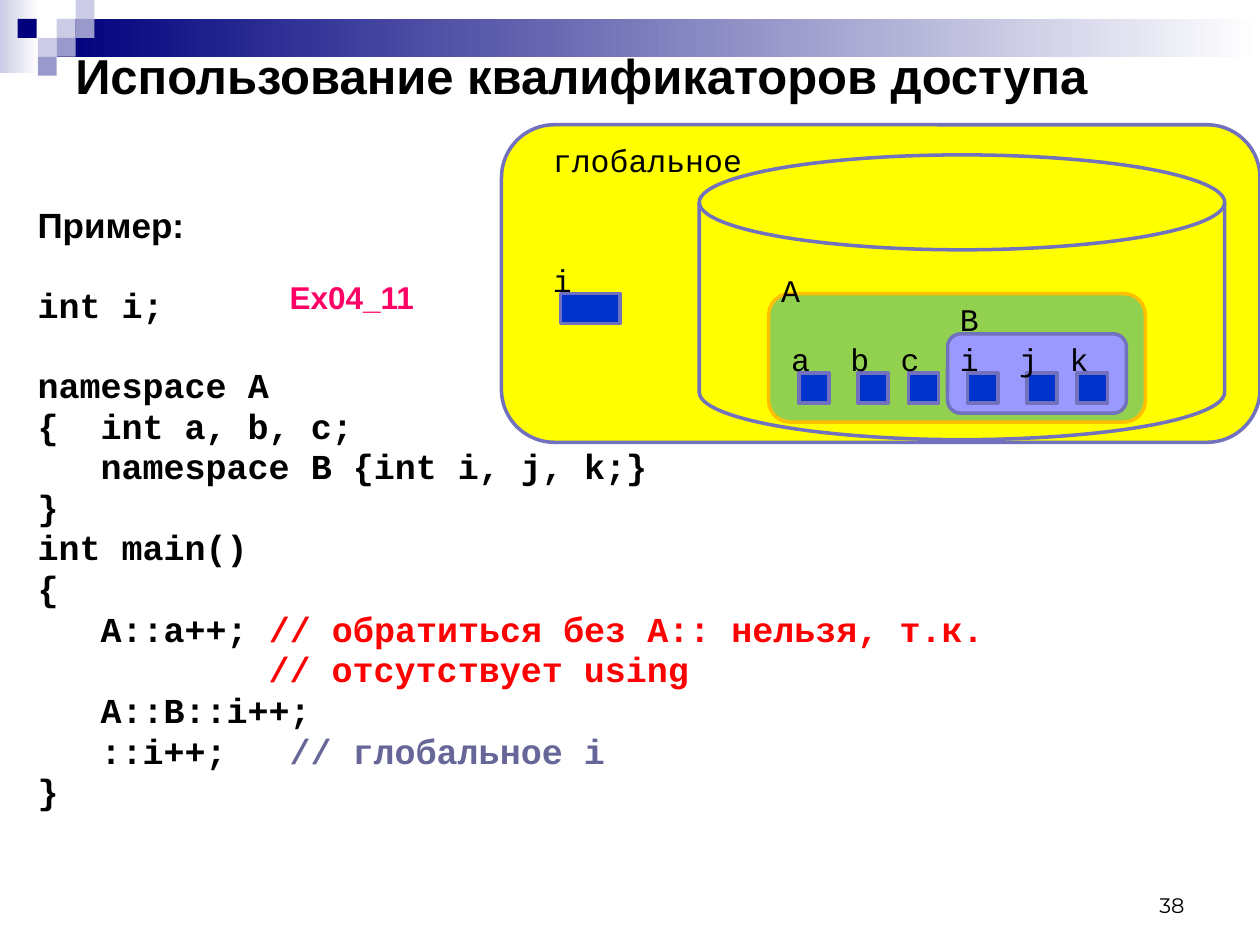
from pptx import Presentation
from pptx.dml.color import RGBColor
from pptx.enum.shapes import MSO_SHAPE
from pptx.enum.text import MSO_ANCHOR, PP_ALIGN
from pptx.oxml.xmlchemy import OxmlElement
from pptx.util import Inches, Pt

RECT = MSO_SHAPE.RECTANGLE
ROUNDED = MSO_SHAPE.FLOWCHART_ALTERNATE_PROCESS
DISK = MSO_SHAPE.FLOWCHART_MAGNETIC_DISK
TOP, MIDDLE, BOTTOM = MSO_ANCHOR.TOP, MSO_ANCHOR.MIDDLE, MSO_ANCHOR.BOTTOM
LEFT, RIGHT = PP_ALIGN.LEFT, PP_ALIGN.RIGHT

THEME = {
    "sans": "Arial", "mono": "Courier New", "number": "Montserrat",
    "title_size": 28, "code_size": 20, "label_size": 18, "number_size": 12,
    "text": "000000", "warning": "FF0000", "remark": "666699", "example": "FF0066",
    "navy": "00007D", "lilac": "CCCCE6", "violet": "9999CC", "white": "FFFFFF",
    "outline": "7171BD", "orange": "FFC000", "global": "FFFF00",
    "outer": "92D050", "inner": "9999FF", "cell": "0033CC",
}

TITLE = "Использование квалификаторов доступа"
EXAMPLE = "Ex04_11"
PAGE = "38"

# Blank lines above, indent in characters, then (text, colour) pieces
CODE = [
    (0, 0, [("Пример:", "text")]),
    (1, 0, [("int i;", "text")]),
    (1, 0, [("namespace A", "text")]),
    (0, 0, [("{\tint a, b, c;", "text")]),
    (0, 3, [("namespace B {int i, j, k;}", "text")]),
    (0, 0, [("}", "text")]),
    (0, 0, [("int main()", "text")]),
    (0, 0, [("{", "text")]),
    (0, 3, [("A::a++; ", "text"), ("// обратиться без A:: нельзя, т.к.", "warning")]),
    (0, 11, [("// отсутствует using", "warning")]),
    (0, 3, [("A::B::i++;", "text")]),
    (0, 3, [("::i++;\t", "text"), ("// глобальное i", "remark")]),
    (0, 0, [("}", "text")]),
]
CHAR_WIDTH = 1 / 6
TAB_COLUMNS = (3, 12)
BLANK_LINE, LINE_GAP = 22.5, 4

# Preset, box, fill, line
SCOPES = [
    (ROUNDED, (3.98, 0.99, 6.02, 2.52), "global", "outline"),
    (ROUNDED, (6.1, 2.33, 2.99, 1.02), "outer", "orange"),
    (ROUNDED, (7.52, 2.65, 1.42, 0.63), "inner", "outline"),
    (DISK, (5.55, 1.23, 4.17, 2.26), None, "outline"),
]
SCOPE_LABELS = [("глобальное", 4.29, 1.07), ("A", 6.1, 2.1), ("B", 7.52, 2.33)]
GLOBAL_VARIABLE = ("i", 4.29, 2.02, 0.47)
MEMBERS = [("a", 6.18), ("b", 6.65), ("c", 7.05), ("i", 7.52), ("j", 7.99), ("k", 8.39)]
MEMBER_TOP, CELL = 2.65, 0.24

TILE = 0.15
TILES = [(0.45, 0.15, "lilac"), (0.6, 0, "lilac"), (0.6, 0.15, "violet"),
         (0.3, 0.3, "lilac"), (0.14, 0.15, "navy"), (0.45, 0.3, "violet"),
         (0.3, 0.45, "violet")]
BANDS = [((0, 0, 0.31, 0.58), "lilac"), ((0.45, 0.15, 9.55, 0.3), "navy")]


def color(key):
    return RGBColor.from_string(THEME[key])


def add_box(slide, preset, box, fill=None, line=None):
    shape = slide.shapes.add_shape(preset, *map(Inches, box))
    shape.shadow.inherit = False
    if fill:
        shape.fill.solid()
        shape.fill.fore_color.rgb = color(fill)
    else:
        shape.fill.background()
    if line:
        shape.line.color.rgb = color(line)
        shape.line.width = Pt(2)
    else:
        shape.line.fill.background()
    return shape


def add_band(slide, box, start):
    """Add a bar that fades from the start colour to white."""
    fill = add_box(slide, RECT, box).fill
    fill.gradient()
    fill.gradient_angle = 0
    for stop, key, position in zip(fill.gradient_stops, (start, "white"), (0, 1)):
        stop.color.rgb = color(key)
        stop.position = position


def style(font, face, size, key, bold=False):
    font.name, font.size, font.bold = THEME[face], Pt(THEME[size]), bold
    font.color.rgb = color(key)


def add_frame(slide, box, anchor=TOP, wrap=True):
    frame = slide.shapes.add_textbox(*map(Inches, box)).text_frame
    frame.word_wrap, frame.vertical_anchor = wrap, anchor
    return frame


def add_text(slide, text, box, face, size, key="text", bold=False,
             align=LEFT, anchor=TOP, wrap=True):
    paragraph = add_frame(slide, box, anchor, wrap).paragraphs[0]
    paragraph.text, paragraph.alignment = text, align
    style(paragraph.font, face, size, key, bold)


def add_label(slide, text, left, top):
    width = 0.2 + 0.15 * len(text)
    add_text(slide, text, (left, top, width, 0.4), "mono", "label_size", wrap=False)


def add_variable(slide, name, left, top, width=CELL):
    add_box(slide, RECT, (left + 0.16, top + 0.31, width, CELL), "cell", "outline")
    add_label(slide, name, left, top)


def set_indent(paragraph, columns):
    """Indent by whole characters and set the tab stops of the listing."""
    properties = paragraph._p.get_or_add_pPr()
    properties.set("marL", str(Inches(columns * CHAR_WIDTH)))
    properties.set("indent", "0")
    tabs = OxmlElement("a:tabLst")
    for column in TAB_COLUMNS:
        tab = OxmlElement("a:tab")
        tab.set("pos", str(Inches(column * CHAR_WIDTH)))
        tab.set("algn", "l")
        tabs.append(tab)
    properties.append(tabs)


def add_code(slide):
    frame = add_frame(slide, (0.2, 1.63, 9.6, 5.1))
    for number, (blanks, columns, pieces) in enumerate(CODE):
        paragraph = frame.add_paragraph() if number else frame.paragraphs[0]
        paragraph.line_spacing = 0.8
        paragraph.space_before = Pt(LINE_GAP + blanks * BLANK_LINE)
        set_indent(paragraph, columns)
        face = "mono" if number else "sans"
        style(paragraph.font, face, "code_size", pieces[0][1], True)
        for text, key in pieces:
            run = paragraph.add_run()
            run.text = text
            if key != pieces[0][1]:
                run.font.color.rgb = color(key)


def main():
    deck = Presentation()
    deck.slide_width, deck.slide_height = Inches(10), Inches(7.5)
    slide = deck.slides.add_slide(deck.slide_layouts[6])

    for box, start in BANDS:
        add_band(slide, box, start)
    for left, top, fill in TILES:
        add_box(slide, RECT, (left, top, TILE, TILE), fill)

    add_text(slide, PAGE, (7.17, 6.83, 2.33, 0.5), "number", "number_size",
             align=RIGHT, anchor=BOTTOM)
    add_text(slide, TITLE, (0.5, 0.28, 9, 0.63), "sans", "title_size",
             bold=True, anchor=MIDDLE)
    add_code(slide)

    for scope in SCOPES:
        add_box(slide, *scope)
    for label in SCOPE_LABELS:
        add_label(slide, *label)
    add_variable(slide, *GLOBAL_VARIABLE)
    for name, left in MEMBERS:
        add_variable(slide, name, left, MEMBER_TOP)
    add_text(slide, EXAMPLE, (2.2, 2.16, 1.2, 0.4), "sans", "label_size",
             "example", bold=True, wrap=False)

    deck.save("out.pptx")


if __name__ == "__main__":
    main()
